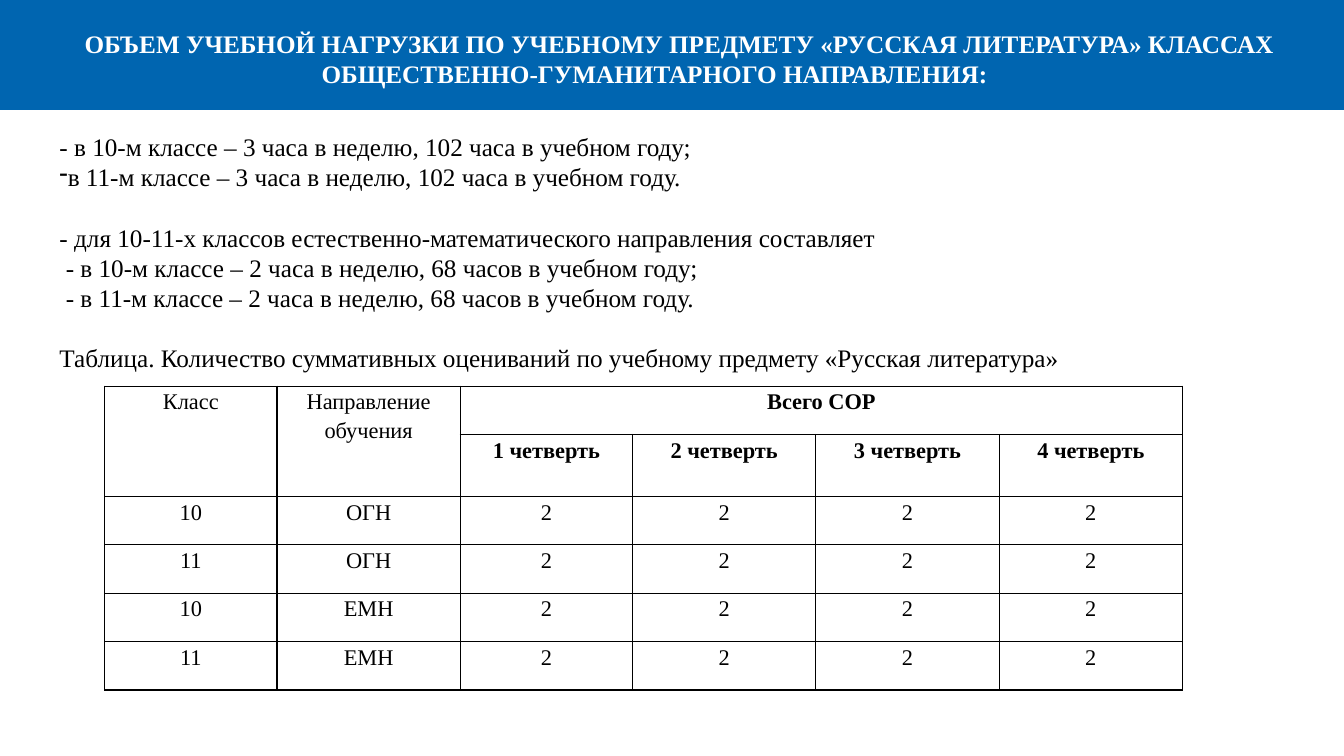
from lxml import etree
from pptx import Presentation
from pptx.dml.color import RGBColor
from pptx.enum import shapes, text
from pptx.oxml import ns
from pptx.util import Cm, Pt

BLUE = RGBColor(0x00, 0x65, 0xB0)
WHITE = RGBColor(0xFF, 0xFF, 0xFF)
BLACK = RGBColor(0, 0, 0)
FIRST_LINE = Cm(1.25)


def add_run(paragraph, words, size, color, bold=False):
    run = paragraph.add_run()
    run.text = words
    run.font.name = "Times New Roman"
    run.font.size = Pt(size)
    run.font.bold = bold
    run.font.color.rgb = color


def add_borders(cell):
    """Draw a thin black line on all four sides, ahead of the cell's fill."""
    props = cell._tc.get_or_add_tcPr()
    for position, side in enumerate(("lnL", "lnR", "lnT", "lnB")):
        line = etree.Element(ns.qn(f"a:{side}"), w=str(Pt(1)))
        fill = etree.SubElement(line, ns.qn("a:solidFill"))
        etree.SubElement(fill, ns.qn("a:srgbClr"), val=str(BLACK))
        props.insert(position, line)


prs = Presentation()
prs.slide_width, prs.slide_height = Cm(33.87), Cm(19.05)
slide = prs.slides.add_slide(prs.slide_layouts[6])

# Heading band
band = slide.shapes.add_shape(
    shapes.MSO_SHAPE.RECTANGLE, 0, 0, prs.slide_width, Cm(2.77))
band.shadow.inherit = False
band.fill.solid()
band.fill.fore_color.rgb = BLUE
band.line.fill.background()

heading = slide.shapes.add_textbox(0, Cm(0.58), Cm(33), Cm(1.8)).text_frame
heading.word_wrap = True
heading.vertical_anchor = text.MSO_ANCHOR.MIDDLE
heading_line = heading.paragraphs[0]
heading_line.alignment = text.PP_ALIGN.CENTER
heading_line._p.get_or_add_pPr().set("indent", str(FIRST_LINE))
add_run(heading_line,
        "ОБЪЕМ УЧЕБНОЙ НАГРУЗКИ ПО УЧЕБНОМУ ПРЕДМЕТУ «РУССКАЯ ЛИТЕРАТУРА» "
        "КЛАССАХ ОБЩЕСТВЕННО-ГУМАНИТАРНОГО НАПРАВЛЕНИЯ:", 18, WHITE, True)

# Assessments per quarter
QUARTERS = [f"{number} четверть" for number in range(1, 5)]
ROWS = [["Класс", "Направление обучения", "Всего СОР", "", "", ""],
        ["", "", *QUARTERS]]
ROWS += [[grade, track] + ["2"] * 4
         for track in ("ОГН", "ЕМН") for grade in ("10", "11")]
WIDTHS = [4.34, 4.62, 4.34, 4.62, 4.62, 4.62]

assessments = slide.shapes.add_table(
    len(ROWS), len(WIDTHS), Cm(2.64), Cm(9.73), Cm(27.16), Cm(7.32)).table
assessments.first_row = assessments.horz_banding = False
for column, width in zip(assessments.columns, WIDTHS):
    column.width = Cm(width)
for r, row in enumerate(ROWS):
    assessments.rows[r].height = Cm(1.22)
    for c, words in enumerate(row):
        cell = assessments.cell(r, c)
        cell.fill.background()
        cell.margin_left = cell.margin_right = Cm(0.18)
        cell.margin_top = cell.margin_bottom = 0
        add_borders(cell)
        entry = cell.text_frame.paragraphs[0]
        entry.alignment = text.PP_ALIGN.CENTER
        entry.line_spacing = 1.15
        if words:
            add_run(entry, words, 16, BLACK, r < 2 and c >= 2)
for top, left, bottom, right in ((0, 0, 1, 0), (0, 1, 1, 1), (0, 2, 0, 5)):
    assessments.cell(top, left).merge(assessments.cell(bottom, right))

# Hours: words, bullet, space before in points
HOURS = [
    ("- в 10-м классе – 3 часа в неделю, 102 часа в учебном году;", "", 0),
    ("в 11-м классе – 3 часа в неделю, 102 часа в учебном году.", "-", 0),
    ("- для 10-11-х классов естественно-математического направления составляет",
     "", 21.6),
    (" - в 10-м классе – 2 часа в неделю, 68 часов в учебном году;", "", 0),
    (" - в 11-м классе – 2 часа в неделю, 68 часов в учебном году.", "", 0),
    ("Таблица. Количество суммативных оцениваний по учебному предмету "
     "«Русская литература»", "", 21.6),
]
hours = slide.shapes.add_textbox(0, Cm(3.18), prs.slide_width, Cm(7.19)).text_frame
hours.word_wrap = True
hours.vertical_anchor = text.MSO_ANCHOR.TOP
for i, (words, bullet, gap) in enumerate(HOURS):
    line = hours.add_paragraph() if i else hours.paragraphs[0]
    line.space_before = Pt(gap)
    props = line._p.get_or_add_pPr()
    props.set("marL", "0")
    props.set("indent", str(FIRST_LINE))
    if bullet:
        etree.SubElement(props, ns.qn("a:buFontTx"))
        etree.SubElement(props, ns.qn("a:buChar"), char=bullet)
    add_run(line, words, 18, BLACK)

prs.save("out.pptx")
